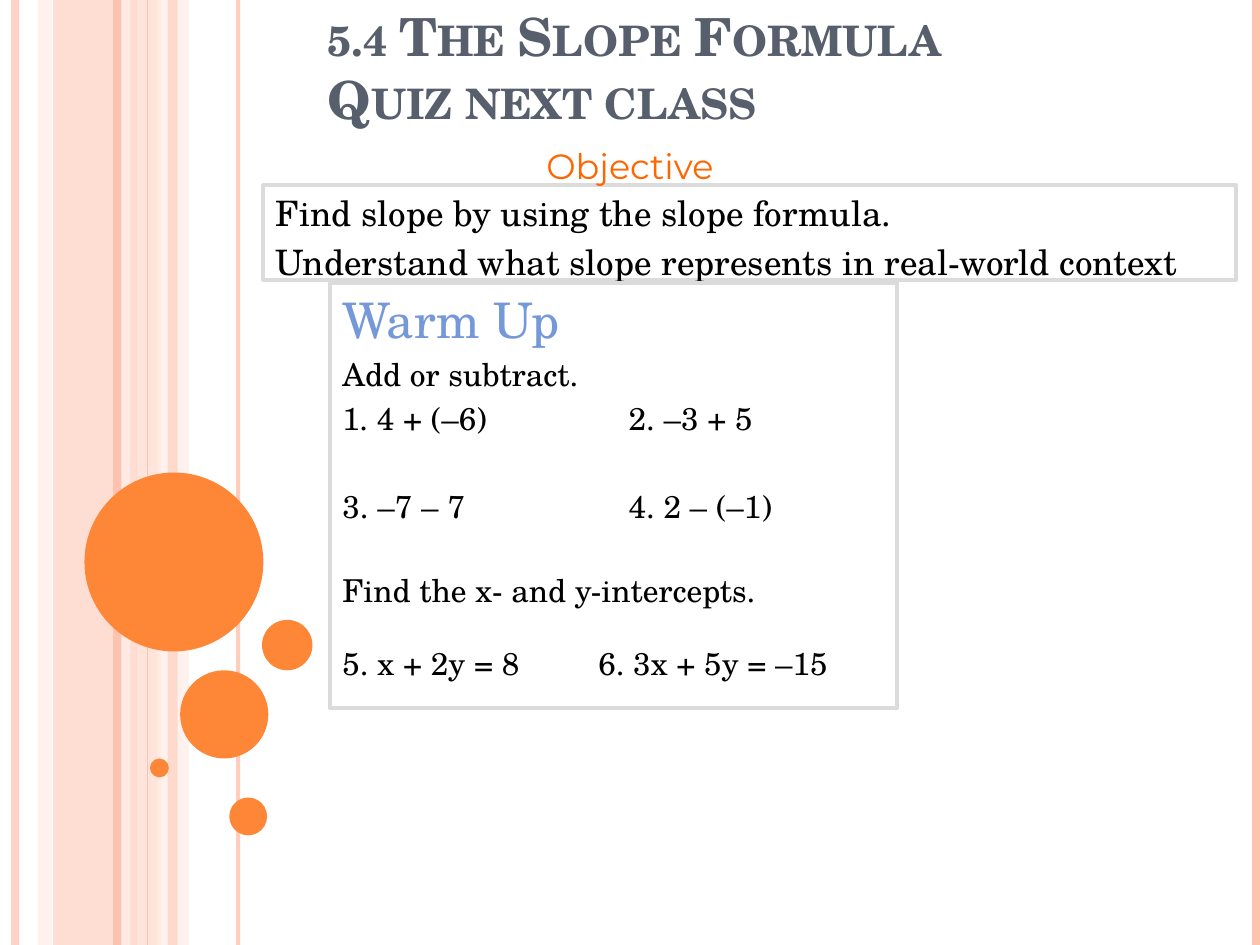
import pptx
import pptx.util
import pptx.dml.color
import pptx.enum.shapes
import pptx.enum.text
import pptx.oxml.ns
from lxml import etree

Inches, Pt = pptx.util.Inches, pptx.util.Pt
RGBColor = pptx.dml.color.RGBColor
SHAPE = pptx.enum.shapes.MSO_SHAPE
ANCHOR = pptx.enum.text.MSO_ANCHOR
ALIGN = pptx.enum.text.PP_ALIGN
qn = pptx.oxml.ns.qn

PEACH = RGBColor(0xFE, 0xC3, 0xAE)
BLUSH = RGBColor(0xFF, 0xD9, 0xCE)
PALE = RGBColor(0xFF, 0xED, 0xE8)
ORANGE = RGBColor(0xFE, 0x86, 0x37)
BRIGHT_ORANGE = RGBColor(0xFF, 0x66, 0x00)
SLATE = RGBColor(0x57, 0x5F, 0x6D)
BLUE = RGBColor(0x75, 0x98, 0xD9)
GREY = RGBColor(0xDB, 0xDB, 0xDB)
BLACK = RGBColor(0, 0, 0)
SERIF, SANS = "TeX Gyre Schola", "Montserrat"
WIDTH, HEIGHT = 10, 7.5


def set_opacity(sp, percent):
    color = sp.element.spPr.find(".//" + qn("a:srgbClr"))
    etree.SubElement(color, qn("a:alpha")).set("val", str(percent * 1000))


def add_filled(s, kind, left, top, width, height, color):
    sp = s.shapes.add_shape(kind, Inches(left), Inches(top), Inches(width), Inches(height))
    sp.shadow.inherit = False
    sp.fill.solid()
    sp.fill.fore_color.rgb = color
    sp.line.fill.background()
    return sp


def add_stripe(s, x, height, color, weight, opacity):
    line = s.shapes.add_connector(pptx.enum.shapes.MSO_CONNECTOR.STRAIGHT,
                                  Inches(x), 0, Inches(x), Inches(height))
    line.line.color.rgb = color
    line.line.width = Pt(weight)
    set_opacity(line, opacity)
    etree.SubElement(line.element.spPr, qn("a:effectLst"))


def add_decoration(s, height):
    # Wide bands: left, width, colour, opacity
    for left, width, color, opacity in [(0.42, 0.67, PEACH, 54), (0.3, 0.11, BLUSH, 36),
                                        (1.08, 0.2, BLUSH, 70), (1.25, 0.25, PALE, 71),
                                        (1.33, 0.08, PEACH, 51)]:
        set_opacity(add_filled(s, SHAPE.RECTANGLE, left, 0, width, height, color), opacity)
    # Thin stripes: x, colour, weight, opacity
    for x, color, weight, opacity in [(0.12, PEACH, 4.5, 73), (1, PALE, 4.5, 83),
                                      (0.93, PEACH, 4.5, 100), (1.89, PEACH, 2.25, 82),
                                      (1.17, PEACH, 0.75, 100), (9.97, PEACH, 4.5, 100)]:
        add_stripe(s, x, height, color, weight, opacity)
    # Bubbles: left, top, diameter
    for left, top, size in [(0.67, 3.75, 1.42), (1.43, 5.32, 0.7), (1.19, 6.02, 0.15),
                            (1.82, 6.33, 0.3), (2.08, 4.92, 0.4)]:
        add_filled(s, SHAPE.OVAL, left, top, size, size, ORANGE)


def add_run(p, text, size, color, font=SERIF):
    r = p.add_run()
    r.text = text
    r.font.size = Pt(size)
    r.font.name = font
    r.font.color.rgb = color
    return r


def add_paragraphs(tf, rows, tab=None):
    """Each row is (text, size, colour, space before); tab is in inches."""
    for i, (text, size, color, before) in enumerate(rows):
        p = tf.add_paragraph() if i else tf.paragraphs[0]
        p.alignment = ALIGN.LEFT
        p.space_before = Pt(before)
        if "\t" in text:
            tabs = etree.SubElement(p._p.get_or_add_pPr(), qn("a:tabLst"))
            etree.SubElement(tabs, qn("a:tab"), pos=str(Inches(tab)), algn="l")
        add_run(p, text, size, color)


def add_text(s, left, top, width, height):
    tf = s.shapes.add_textbox(Inches(left), Inches(top), Inches(width), Inches(height)).text_frame
    tf.word_wrap = True
    return tf


def add_frame(s, left, top, width, height):
    sp = s.shapes.add_shape(SHAPE.RECTANGLE, Inches(left), Inches(top), Inches(width), Inches(height))
    sp.shadow.inherit = False
    sp.fill.background()
    sp.line.color.rgb = GREY
    sp.line.width = Pt(2.25)
    tf = sp.text_frame
    tf.word_wrap = True
    tf.vertical_anchor = ANCHOR.TOP
    return tf


def add_title(s, left, top, width, height):
    sp = s.shapes.title
    sp.left, sp.top, sp.width, sp.height = (Inches(v) for v in (left, top, width, height))
    tf = sp.text_frame
    tf.auto_size = pptx.enum.text.MSO_AUTO_SIZE.NONE
    tf.vertical_anchor = ANCHOR.BOTTOM
    p = tf.paragraphs[0]
    p.alignment = ALIGN.LEFT
    for i, text in enumerate(["5.4 The Slope Formula", "Quiz next class"]):
        if i:
            p.add_line_break()
        r = add_run(p, text, 30, SLATE)
        r.font.bold = True
        r.font._element.set("cap", "small")


def add_objective(s, left, top, width, height):
    add_paragraphs(add_frame(s, left, top, width, height), [
        ("Find slope by using the slope formula.", 20, BLACK, 0),
        ("Understand what slope represents in real-world context", 20, BLACK, 4)])
    # Heading centred on the whole slide
    tf = add_text(s, 0, top - 0.4, WIDTH, 0.49)
    tf.vertical_anchor = ANCHOR.MIDDLE
    p = tf.paragraphs[0]
    p.alignment = ALIGN.CENTER
    add_run(p, "Objective", 20, BRIGHT_ORANGE, SANS)


def add_warm_up(s, left, top, width, height):
    add_paragraphs(add_frame(s, left, top, width, height), [
        ("Warm Up", 28, BLUE, 0),
        ("Add or subtract.", 18, BLACK, 3.6),
        ("1. 4 + (–6)\t2. –3 + 5", 18, BLACK, 3.6),
        ("3. –7 – 7\t4. 2 – (–1)", 18, BLACK, 29)], tab=2.27)
    # Intercept exercises
    add_paragraphs(add_text(s, left, top + 2.23, width, 0.5),
                   [("Find the x- and y-intercepts.", 18, BLACK, 0)])
    add_paragraphs(add_text(s, left, top + 2.81, width, 0.4),
                   [("5. x + 2y = 8\t6. 3x + 5y = –15", 18, BLACK, 0)], tab=2.03)


def main():
    prs = pptx.Presentation()
    prs.slide_width, prs.slide_height = Inches(WIDTH), Inches(HEIGHT)
    s = prs.slides.add_slide(prs.slide_layouts.get_by_name("Title Only"))
    add_decoration(s, HEIGHT)
    add_title(s, 2.5, -0.19, 6.75, 1.27)
    add_objective(s, 2.09, 1.47, 7.72, 0.75)
    add_warm_up(s, 2.62, 2.25, 4.5, 3.37)
    prs.save("out.pptx")


if __name__ == "__main__":
    main()
